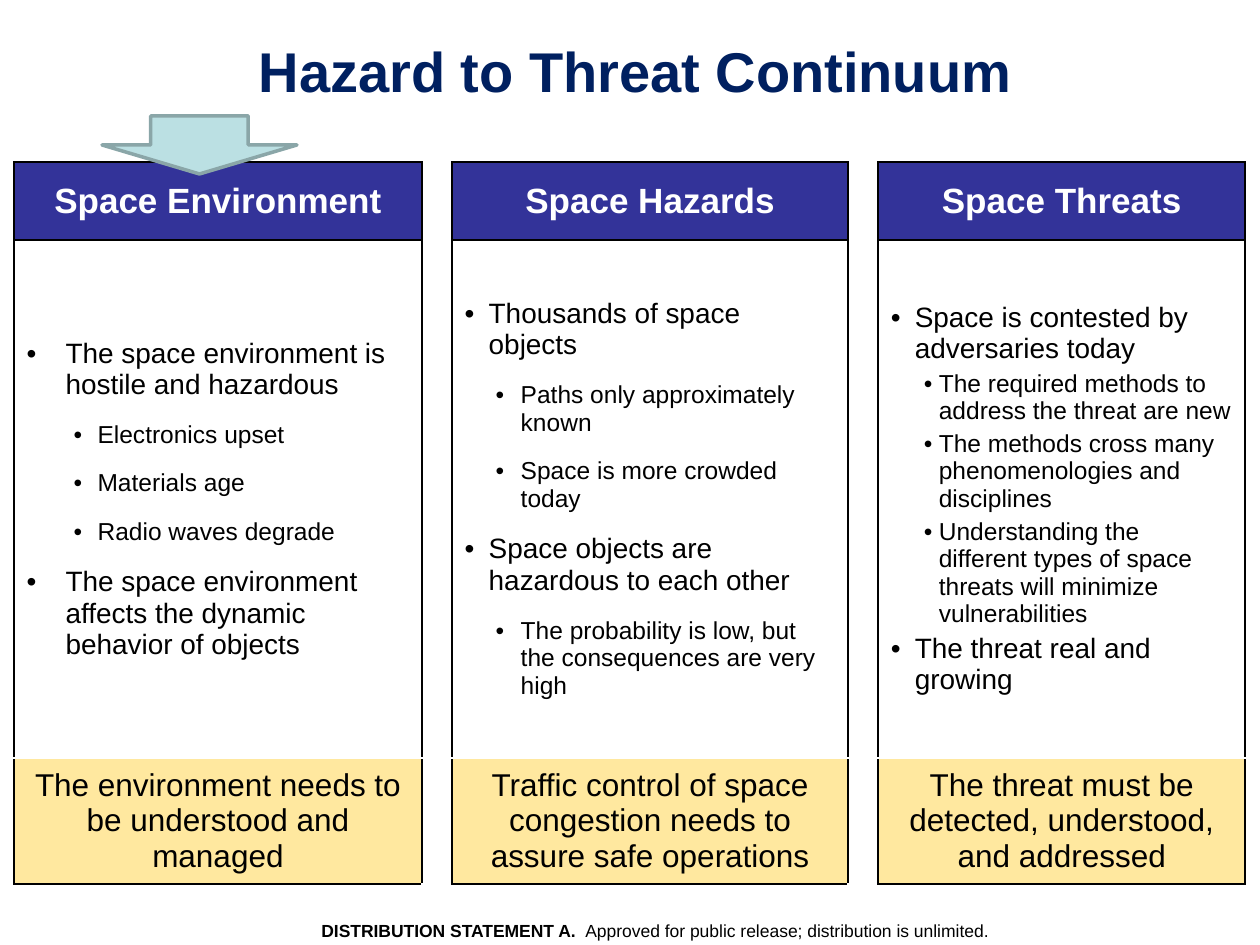
from lxml import etree
from pptx import Presentation
from pptx.dml.color import RGBColor
from pptx.enum.shapes import MSO_SHAPE
from pptx.enum.text import MSO_ANCHOR, PP_ALIGN
from pptx.oxml.ns import qn
from pptx.util import Emu, Pt

CENTER = PP_ALIGN.CENTER
LEFT = PP_ALIGN.LEFT
MIDDLE = MSO_ANCHOR.MIDDLE
DOWN_ARROW = MSO_SHAPE.DOWN_ARROW

EMU_PER_PX = 914400 / 126
FONT = "Arial"
COLORS = {
    "black": "000000",
    "white": "FFFFFF",
    "title": "002060",
    "header": "333399",
    "conclusion": "FFE89F",
    "arrow": "BBE0E3",
    "arrow_line": "8AA6A8",
}
COLUMN_WIDTHS = [408, 29, 396, 29, 367]
ROW_HEIGHTS = [78, 518, 118]
BULLET_SIZES = [16, 14]

# Each bullet is (level, text); indents hold (margin, hanging) in px per level.
TOPICS = [
    {
        "header": "Space Environment",
        "indents": [(39, 39), (71, 24)],
        "spacing": {"space_after": Pt(12)},
        "bullets": [
            (0, "The space environment is hostile and hazardous"),
            (1, "Electronics upset"),
            (1, "Materials age"),
            (1, "Radio waves degrade"),
            (0, "The space environment affects the dynamic behavior of objects"),
        ],
        "conclusion": "The environment needs to be understood and managed",
    },
    {
        "header": "Space Hazards",
        "indents": [(24, 24), (56, 25)],
        "spacing": {"space_after": Pt(12)},
        "bullets": [
            (0, "Thousands of space objects"),
            (1, "Paths only approximately known"),
            (1, "Space is more crowded today"),
            (0, "Space objects are hazardous to each other"),
            (1, "The probability is low, but the consequences are very high"),
        ],
        "conclusion": "Traffic control of space congestion needs to assure safe operations",
    },
    {
        "header": "Space Threats",
        "indents": [(24, 24), (48, 15)],
        "spacing": {"space_before": Pt(3)},
        "bullets": [
            (0, "Space is contested by adversaries today"),
            (1, "The required methods to address the threat are new"),
            (1, "The methods cross many phenomenologies and disciplines"),
            (1, "Understanding the different types of space threats will "
                "minimize vulnerabilities"),
            (0, "The threat real and growing"),
        ],
        "conclusion": "The threat must be detected, understood, and addressed",
    },
]


def px(length):
    return Emu(round(length * EMU_PER_PX))


def color(name):
    return RGBColor.from_string(COLORS[name])


def set_attributes(target, values):
    for name, value in values.items():
        setattr(target, name, value)


def add_run(paragraph, text, size, color_name="black", bold=False):
    run = paragraph.add_run()
    run.text = text
    set_attributes(run.font, {"name": FONT, "size": Pt(size), "bold": bold})
    run.font.color.rgb = color(color_name)


def add_text_box(slide, box, runs, align, line_spacing=None):
    """Add one paragraph; each run is (text, size, color, bold)."""
    frame = slide.shapes.add_textbox(*map(px, box)).text_frame
    set_attributes(frame, {"word_wrap": True, "vertical_anchor": MIDDLE})
    paragraph = frame.paragraphs[0]
    set_attributes(paragraph, {"alignment": align, "line_spacing": line_spacing})
    for run in runs:
        add_run(paragraph, *run)


def set_borders(cell, top, bottom):
    """Draw 1 pt borders: black sides, and the named colors above and below."""
    properties = cell._tc.get_or_add_tcPr()
    sides = {"lnL": "black", "lnR": "black", "lnT": top, "lnB": bottom}
    for tag, name in sides.items():
        line = etree.SubElement(properties, qn(f"a:{tag}"), w=str(Pt(1)))
        fill = etree.SubElement(line, qn("a:solidFill"))
        etree.SubElement(fill, qn("a:srgbClr"), val=COLORS[name])


def style_cell(cell, fill, top="black", bottom="black"):
    set_borders(cell, top, bottom)
    cell.vertical_anchor = MIDDLE
    cell.fill.solid()
    cell.fill.fore_color.rgb = color(fill)


def fill_label(cell, text, size, color_name="black", bold=False):
    paragraph = cell.text_frame.paragraphs[0]
    paragraph.alignment = CENTER
    add_run(paragraph, text, size, color_name, bold)


def fill_bullets(cell, topic):
    frame = cell.text_frame
    for index, (level, text) in enumerate(topic["bullets"]):
        paragraph = frame.add_paragraph() if index else frame.paragraphs[0]
        margin, hanging = topic["indents"][level]
        properties = paragraph._p.get_or_add_pPr()
        properties.set("marL", str(px(margin)))
        properties.set("indent", str(-px(hanging)))
        etree.SubElement(properties, qn("a:buFont"), typeface=FONT)
        etree.SubElement(properties, qn("a:buChar"), char="•")
        set_attributes(paragraph, {"level": level, "alignment": LEFT})
        spacing = topic["spacing"]
        if index or "space_before" not in spacing:
            set_attributes(paragraph, spacing)
        add_run(paragraph, text, BULLET_SIZES[level])


def add_continuum_table(slide):
    box = (14, 162, sum(COLUMN_WIDTHS), sum(ROW_HEIGHTS))
    table = slide.shapes.add_table(
        len(ROW_HEIGHTS), len(COLUMN_WIDTHS), *map(px, box)).table
    set_attributes(table, {"first_row": False, "horz_banding": False})
    for column, width in zip(table.columns, COLUMN_WIDTHS):
        column.width = px(width)
    for row, height in zip(table.rows, ROW_HEIGHTS):
        row.height = px(height)

    for index, topic in enumerate(TOPICS):
        header, body, conclusion = (
            table.cell(row, 2 * index) for row in range(len(ROW_HEIGHTS)))
        style_cell(header, "header")
        fill_label(header, topic["header"], 20, "white", True)
        style_cell(body, "white", bottom="white")
        fill_bullets(body, topic)
        style_cell(conclusion, "conclusion", top="white")
        fill_label(conclusion, topic["conclusion"], 18)

    last_row = len(ROW_HEIGHTS) - 1
    for gap in range(1, len(COLUMN_WIDTHS), 2):
        for row in range(len(ROW_HEIGHTS)):
            style_cell(table.cell(row, gap), "white", "white", "white")
        table.cell(0, gap).merge(table.cell(last_row, gap))


def add_marker_arrow(slide):
    arrow = slide.shapes.add_shape(DOWN_ARROW, *map(px, (102, 116, 195, 58)))
    arrow.shadow.inherit = False
    arrow.fill.solid()
    arrow.fill.fore_color.rgb = color("arrow")
    arrow.line.color.rgb = color("arrow_line")
    arrow.line.width = Pt(2)


def main():
    presentation = Presentation()
    set_attributes(presentation, {"slide_width": px(1260), "slide_height": px(945)})
    slide = presentation.slides.add_slide(presentation.slide_layouts[6])
    add_text_box(slide, (309, 913, 703, 34), [
        ("DISTRIBUTION STATEMENT A.  ", 10, "black", True),
        ("Approved for public release; distribution is unlimited.", 10),
    ], LEFT)
    add_text_box(slide, (129, 21, 1013, 107), [
        ("Hazard to Threat Continuum", 32, "title", True),
    ], CENTER, line_spacing=0.9)
    add_continuum_table(slide)
    add_marker_arrow(slide)
    presentation.save("out.pptx")


if __name__ == "__main__":
    main()
